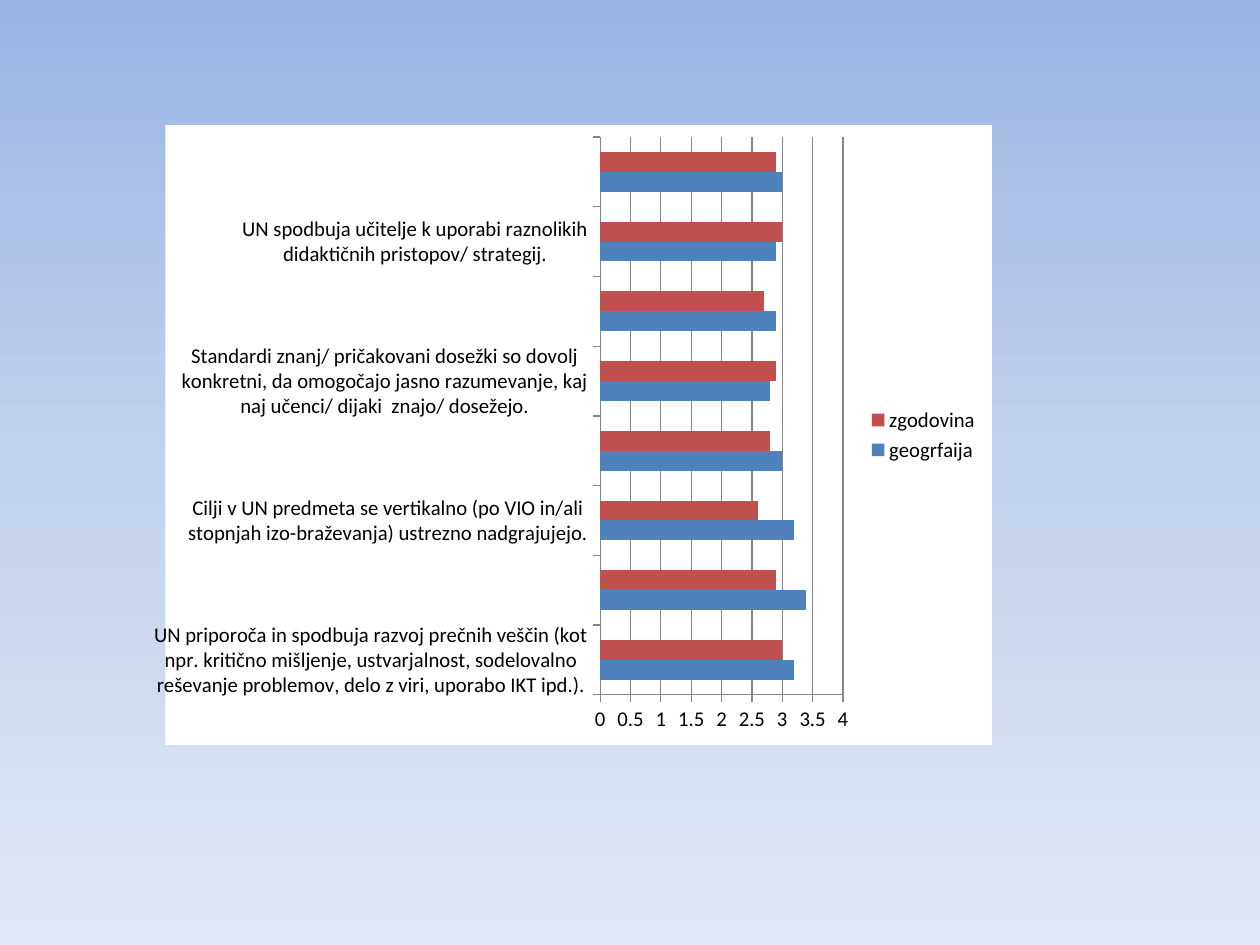
from copy import deepcopy

from lxml.etree import SubElement
from pptx import Presentation
from pptx.chart.data import CategoryChartData
from pptx.dml.color import RGBColor
from pptx.enum.chart import XL_CHART_TYPE, XL_LEGEND_POSITION, XL_TICK_MARK
from pptx.oxml import parse_xml
from pptx.oxml.ns import nsdecls, qn
from pptx.util import Emu, Pt

PX = 914400 // 126
BACKGROUND_STOPS = [(0, "9AB5E4"), (50, "C2D1ED"), (100, "E1E8F5")]
STATEMENTS = [
    "UN priporoča in spodbuja razvoj prečnih veščin (kot npr. kritično mišljenje, "
    "ustvarjalnost, sodelovalno reševanje problemov, delo z viri, uporabo IKT ipd.).",
    "Cilji v UN predmeta se vertikalno (po VIO in/ali stopnjah izo-braževanja) "
    "ustrezno nadgrajujejo.",
    "Standardi znanj/ pričakovani dosežki so dovolj konkretni, da omogočajo jasno "
    "razumevanje, kaj naj učenci/ dijaki  znajo/ dosežejo.",
    "UN spodbuja učitelje k uporabi raznolikih didaktičnih pristopov/ strategij.",
]
SUBJECTS = [
    ("geogrfaija", "4F81BD", [3.2, 3.4, 3.2, 3, 2.8, 2.9, 2.9, 3]),
    ("zgodovina", "C0504D", [3, 2.9, 2.6, 2.8, 2.9, 2.7, 3, 2.9]),
]
GROUND_WIDTH, GROUND_HEIGHT = 827, 620
PLOT_LAYOUT = {"x": 435 / GROUND_WIDTH, "y": 12 / GROUND_HEIGHT,
               "w": 243 / GROUND_WIDTH, "h": 558 / GROUND_HEIGHT}


def px(length):
    """Turn whole pixels into EMU."""
    return Emu(length * PX)


def rgb(value):
    """Turn a hex string into a colour."""
    return RGBColor.from_string(value)


def set_all(target, values):
    """Set attributes from a dict of format values."""
    for key, value in values.items():
        setattr(target, key, value)


def paint_background(slide):
    """Fill the slide with a downward gradient."""
    fill = slide.background.fill
    fill.gradient()
    fill.gradient_angle = 270
    stop_list = slide.element.find(".//" + qn("a:gsLst"))
    stop_list.insert(1, deepcopy(stop_list[0]))
    for stop, (position, color) in zip(fill.gradient_stops, BACKGROUND_STOPS):
        stop.position = position / 100
        stop.color.rgb = rgb(color)


def style_line(line):
    """Give an axis or gridline its thin grey stroke."""
    line.color.rgb = rgb("868686")
    line.width = Pt(0.75)


def style_axes(chart):
    """Format both axes and label every second bar group."""
    for axis in (chart.category_axis, chart.value_axis):
        axis.major_tick_mark = XL_TICK_MARK.OUTSIDE
        style_line(axis.format.line)
    set_all(chart.value_axis, {"minimum_scale": 0, "maximum_scale": 4,
                               "major_unit": 0.5, "has_major_gridlines": True})
    style_line(chart.value_axis.major_gridlines.format.line)
    labels = chart.value_axis.tick_labels
    set_all(labels, {"number_format": "General", "number_format_is_linked": False})
    skip = parse_xml(f'<c:tickLblSkip {nsdecls("c")} val="2"/>')
    chart.category_axis._element.find(qn("c:noMultiLvlLbl")).addprevious(skip)


def place_plot(chart):
    """Set the white chart ground and the inner plot position."""
    ground = parse_xml(
        f'<c:spPr {nsdecls("c", "a")}><a:solidFill><a:srgbClr val="FFFFFF"/>'
        '</a:solidFill><a:ln><a:noFill/></a:ln></c:spPr>')
    chart.element.find(qn("c:chart")).addnext(ground)
    plot_area = chart.element.find(".//" + qn("c:plotArea"))
    for old_layout in plot_area.findall(qn("c:layout")):
        plot_area.remove(old_layout)
    layout = parse_xml(f'<c:layout {nsdecls("c")}/>')
    manual = SubElement(layout, qn("c:manualLayout"))
    settings = {"layoutTarget": "inner", "xMode": "edge", "yMode": "edge"}
    for tag, value in {**settings, **PLOT_LAYOUT}.items():
        SubElement(manual, qn(f"c:{tag}")).set("val", str(value))
    plot_area.insert(0, layout)


def add_survey_chart(slide):
    """Add the bar chart comparing both subjects."""
    data = CategoryChartData()
    data.categories = [label for statement in STATEMENTS for label in (statement, "")]
    for subject, _, scores in SUBJECTS:
        data.add_series(subject, scores)
    chart = slide.shapes.add_chart(XL_CHART_TYPE.BAR_CLUSTERED, px(154), px(125),
                                   px(838), px(620), data).chart
    set_all(chart, {"has_title": False, "has_legend": True})
    set_all(chart.font, {"name": "Calibri", "size": Pt(12)})
    chart.font.color.rgb = rgb("000000")
    set_all(chart.legend, {"position": XL_LEGEND_POSITION.RIGHT,
                           "include_in_layout": False})
    set_all(chart.plots[0], {"gap_width": 150, "vary_by_categories": False})
    for series, (_, color, _) in zip(chart.plots[0].series, SUBJECTS):
        series.format.fill.solid()
        series.format.fill.fore_color.rgb = rgb(color)
    style_axes(chart)
    place_plot(chart)


def main():
    """Build and save the slide."""
    presentation = Presentation()
    set_all(presentation, {"slide_width": px(1260), "slide_height": px(945)})
    slide = presentation.slides.add_slide(presentation.slide_layouts[6])
    paint_background(slide)
    add_survey_chart(slide)
    presentation.save("out.pptx")


if __name__ == "__main__":
    main()
